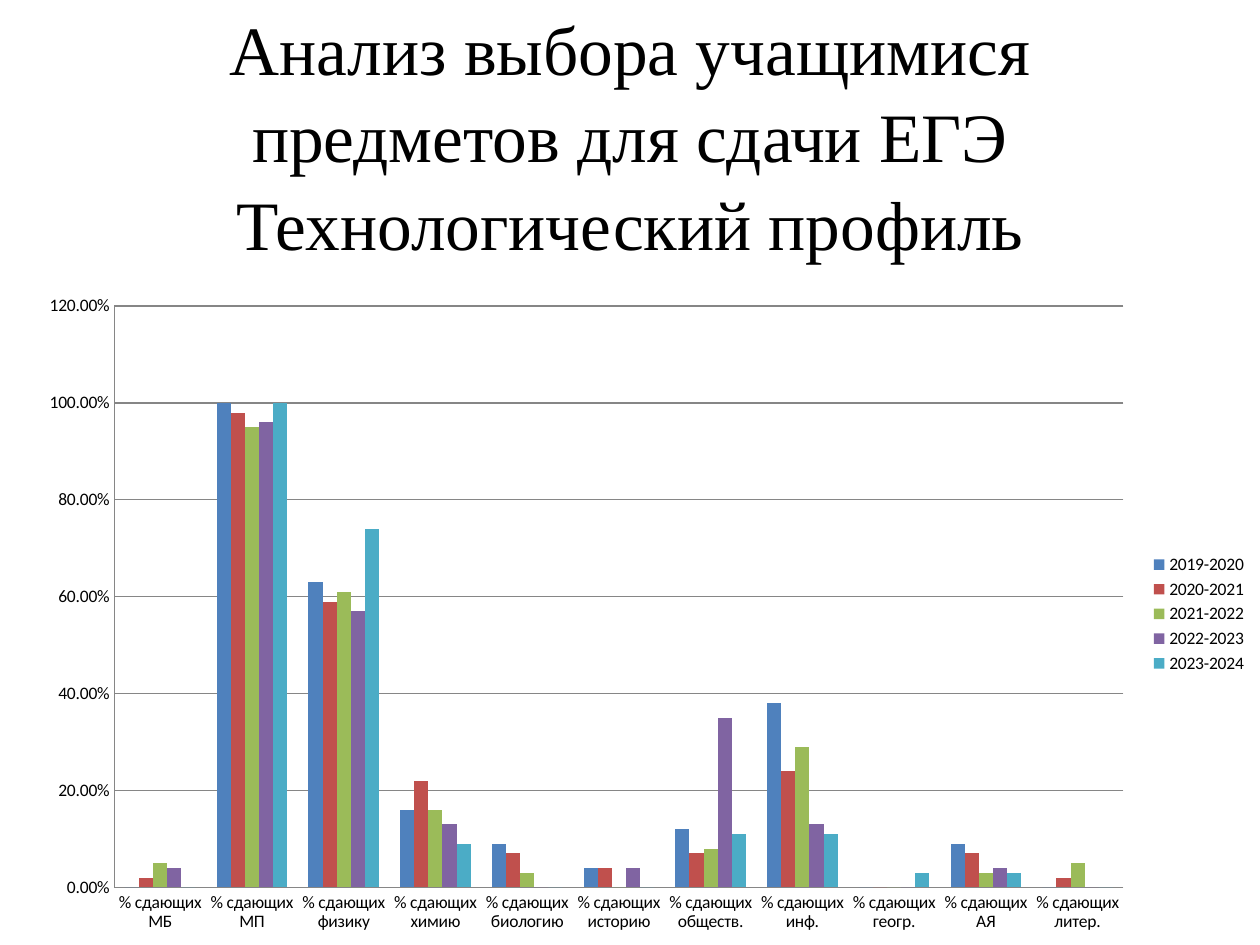
from pptx import Presentation, util as u
from pptx.chart.data import CategoryChartData
from pptx.dml.color import RGBColor
from pptx.enum import chart as ch, text

PX = 914400 // 126
COLORS = {
    "text": "000000", "line": "868686",
    "2019-2020": "4F81BD", "2020-2021": "C0504D", "2021-2022": "9BBB59",
    "2022-2023": "8064A2", "2023-2024": "4BACC6",
}
SUBJECTS = ["МБ", "МП", "физику", "химию", "биологию", "историю",
            "обществ.", "инф.", "геогр.", "АЯ", "литер."]
SHARES = {
    "2019-2020": [0, 1, 0.63, 0.16, 0.09, 0.04, 0.12, 0.38, 0, 0.09, 0],
    "2020-2021": [0.02, 0.98, 0.59, 0.22, 0.07, 0.04, 0.07, 0.24, 0, 0.07, 0.02],
    "2021-2022": [0.05, 0.95, 0.61, 0.16, 0.03, 0, 0.08, 0.29, 0, 0.03, 0.05],
    "2022-2023": [0.04, 0.96, 0.57, 0.13, 0, 0.04, 0.35, 0.13, 0, 0.04, 0],
    "2023-2024": [0, 1, 0.74, 0.09, 0, 0, 0.11, 0.11, 0.03, 0.03, 0],
}


def emu(*px):
    return [u.Emu(n * PX) for n in px]


def rgb(name):
    return RGBColor.from_string(COLORS[name])


def add_text(s, box, words, size, font, color="text", spacing=1.0, bottom=0):
    tf = s.shapes.add_textbox(*emu(*box)).text_frame
    tf.word_wrap = True
    tf.vertical_anchor = text.MSO_ANCHOR.MIDDLE
    tf.margin_top, tf.margin_bottom = emu(0, bottom)
    p = tf.paragraphs[0]
    p.text = words
    p.alignment = text.PP_ALIGN.CENTER
    p.line_spacing = spacing
    for r in p.runs:
        r.font.size, r.font.name = u.Pt(size), font
        r.font.color.rgb = rgb(color)


def add_title(s, box):
    add_text(s, box,
             "Анализ выбора учащимися предметов для сдачи ЕГЭ\vТехнологический профиль",
             size=39.6, font="Times New Roman", spacing=1.05, bottom=76)


def add_exam_chart(s, box):
    data = CategoryChartData(number_format="0.00%")
    data.categories = [f"% сдающих {subject}" for subject in SUBJECTS]
    for year, shares in SHARES.items():
        data.add_series(year, shares)
    chart = s.shapes.add_chart(ch.XL_CHART_TYPE.COLUMN_CLUSTERED, *emu(*box), data).chart
    chart.has_title = False
    chart.font.size, chart.font.name = u.Pt(10), "Calibri"
    chart.font.color.rgb = rgb("text")

    # Columns
    plot = chart.plots[0]
    plot.vary_by_categories = False
    plot.gap_width, plot.overlap = 150, 0
    for series in plot.series:
        series.format.fill.solid()
        series.format.fill.fore_color.rgb = rgb(series.name)

    # Axes and gridlines
    val = chart.value_axis
    val.minimum_scale, val.maximum_scale, val.major_unit = 0, 1.2, 0.2
    val.has_major_gridlines = True
    val.tick_labels.number_format = "0.00%"
    val.tick_labels.number_format_is_linked = False
    for axis in (chart.category_axis, val):
        axis.major_tick_mark = axis.minor_tick_mark = ch.XL_TICK_MARK.NONE
    for part in (chart.category_axis, val, val.major_gridlines):
        part.format.line.color.rgb = rgb("line")
        part.format.line.width = u.Pt(0.75)

    # Legend
    chart.has_legend = True
    chart.legend.position = ch.XL_LEGEND_POSITION.RIGHT
    chart.legend.include_in_layout = False


def main():
    prs = Presentation()
    prs.slide_width, prs.slide_height = emu(1260, 945)
    s = prs.slides.add_slide(prs.slide_layouts[6])
    add_title(s, (63, 38, 1134, 266))
    add_exam_chart(s, (25, 283, 1235, 662))
    prs.save("out.pptx")


if __name__ == "__main__":
    main()
